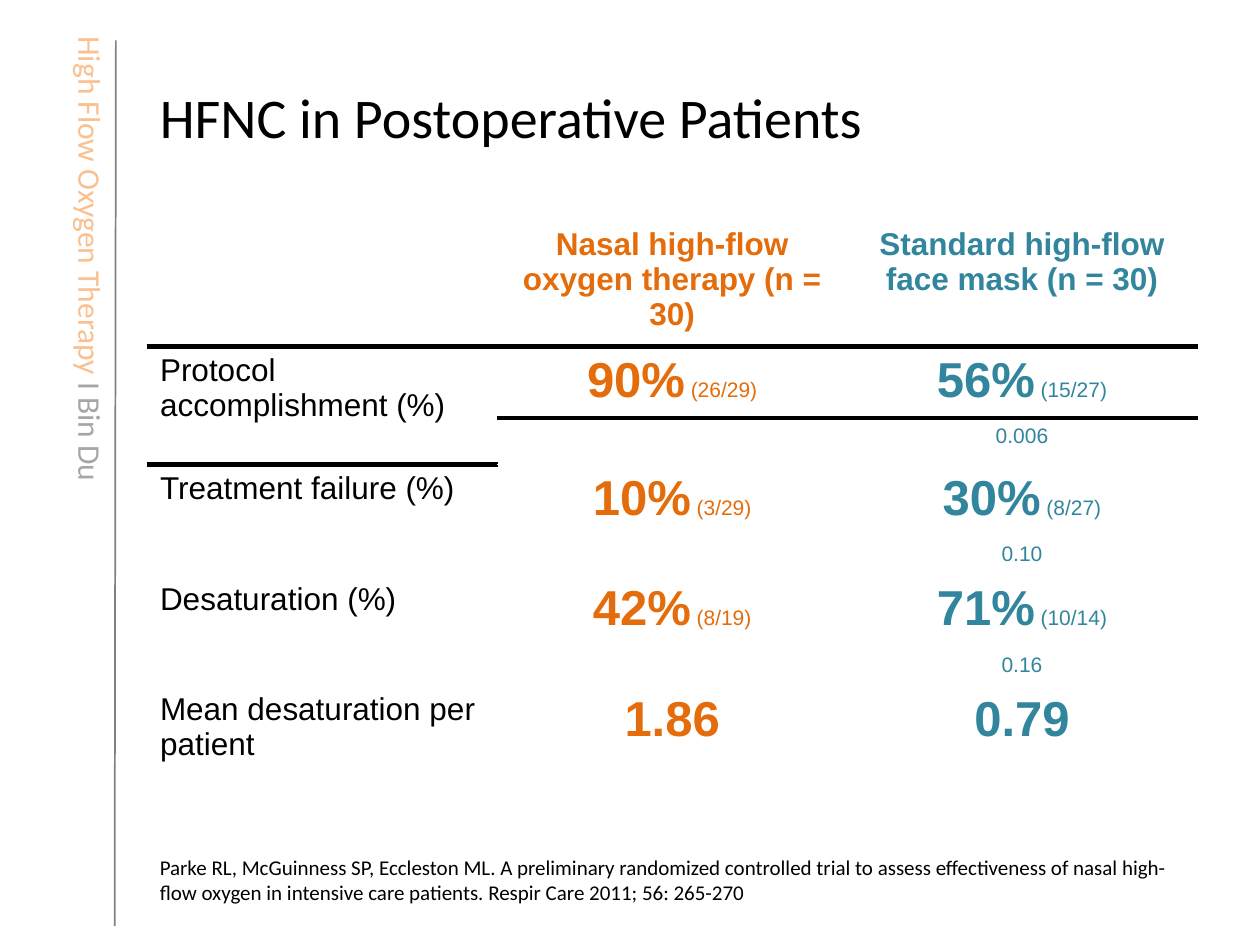
from dataclasses import dataclass
from lxml.etree import SubElement
from pptx import Presentation
from pptx.dml.color import RGBColor
from pptx.enum.text import MSO_ANCHOR, PP_ALIGN
from pptx.oxml import parse_xml
from pptx.oxml.ns import nsdecls, qn
from pptx.util import Inches, Pt


@dataclass(frozen=True)
class Theme:
    black: str = "000000"
    gray: str = "808080"
    pale: str = "A6A6A6"
    peach: str = "FAC090"
    orange: str = "E46C0A"
    teal: str = "31859C"
    head: str = "Calibri"
    body: str = "Arial"
    title: int = 32
    big: int = 28
    text: int = 18
    small: int = 12


class Deck:
    def __init__(self, theme, wide, high):
        self.theme = theme
        self.show = Presentation()
        self.show.slide_width, self.show.slide_height = Inches(wide), Inches(high)
        self.slide = self.show.slides.add_slide(self.show.slide_layouts[6])

    def style(self, font, size=None, color=None, bold=None, face=None):
        if size:
            font.size = Pt(size)
        if color:
            font.color.rgb = RGBColor.from_string(color)
        if bold is not None:
            font.bold = bold
        if face:
            font.name = face

    def text(self, words, box, size, color=None, turn=0, wrap=True, anchor=MSO_ANCHOR.TOP):
        """Words are one string, or (string, color) pairs."""
        shape = self.slide.shapes.add_textbox(*map(Inches, box))
        shape.rotation = turn
        frame = shape.text_frame
        frame.word_wrap = wrap
        frame.vertical_anchor = anchor
        para = frame.paragraphs[0]
        self.style(para.font, size, color, face=self.theme.head)
        for part, tint in [(words, None)] if isinstance(words, str) else words:
            run = para.add_run()
            run.text = part
            self.style(run.font, color=tint)

    def line(self, start, end, color, width):
        rule = self.slide.shapes.add_connector(1, *map(Inches, start + end))
        rule.line.color.rgb = RGBColor.from_string(color)
        rule.line.width = Pt(width)
        SubElement(rule._element.spPr, qn("a:effectLst"))

    def table(self, box, heights, cols):
        shape = self.slide.shapes.add_table(len(heights), cols, *map(Inches, box))
        grid = shape.table
        grid.first_row = grid.horz_banding = False
        for row, high in zip(grid.rows, heights):
            row.height = Inches(high)
        for cell in grid.iter_cells():
            cell.fill.background()
            end = cell.text_frame.paragraphs[0]._p.get_or_add_endParaRPr()
            end.set("sz", str(self.theme.small * 100))
        return grid

    def cell(self, cell, parts, color, align=PP_ALIGN.CENTER):
        """Parts are (string, size, bold) triples."""
        para = cell.text_frame.paragraphs[0]
        para.alignment = align
        self.style(para.font, color=color, face=self.theme.body)
        for words, size, bold in parts:
            run = para.add_run()
            run.text = words
            self.style(run.font, size, bold=bold)

    def edge(self, cell, side, color, width):
        cell._tc.get_or_add_tcPr().insert(0, parse_xml(
            f'<a:ln{side} {nsdecls("a")} w="{Pt(width)}"><a:solidFill>'
            f'<a:srgbClr val="{color}"/></a:solidFill></a:ln{side}>'))


def main():
    look = Theme()
    deck = Deck(look, 10, 7.5)
    left, wide = 1.17, 8.33

    # Side banner
    deck.line((0.92, 0.32), (0.91, 7.35), look.gray, 1)
    deck.text([("High Flow Oxygen Therapy ", look.peach), ("Ι Bin Du", look.pale)],
              (-1.17, 1.88, 3.78, 0.4), look.text, turn=90, wrap=False)

    # Title and source
    deck.text("HFNC in Postoperative Patients", (left, 0.3, wide, 1.25),
              look.title, look.black, anchor=MSO_ANCHOR.MIDDLE)
    deck.text("Parke RL, McGuinness SP, Eccleston ML. A preliminary randomized controlled "
              "trial to assess effectiveness of nasal high-flow oxygen in intensive care "
              "patients. Respir Care 2011; 56: 265-270",
              (left, 6.73, wide, 0.5), look.small, look.black)

    # Table heading
    heights = [1, 0.55, 0.37, 0.56, 0.31, 0.56, 0.31, 0.55, 0.3]
    grid = deck.table((left, 1.75, wide, sum(heights)), heights, 3)
    tints = (look.orange, look.teal)
    heads = ("Nasal high-flow oxygen therapy (n = 30)", "Standard high-flow face mask (n = 30)")
    for col, (words, tint) in enumerate(zip(heads, tints), 1):
        deck.cell(grid.cell(0, col), [(words, look.text, True)], tint)
    for col in range(3):
        deck.edge(grid.cell(0, col), "B", look.black, 3)
        deck.edge(grid.cell(1, col), "T", look.black, 3)

    # Outcomes: two rows each, values above and p value below
    data = [
        ("Protocol accomplishment (%)", ("90%", " (26/29)"), ("56%", " (15/27)"), "0.006"),
        ("Treatment failure (%)", ("10%", " (3/29)"), ("30%", " (8/27)"), "0.10"),
        ("Desaturation (%)", ("42%", " (8/19)"), ("71%", " (10/14)"), "0.16"),
        ("Mean desaturation per patient", ("1.86",), ("0.79",), None),
    ]
    for row, (name, nasal, mask, prob) in zip(range(1, 9, 2), data):
        label = grid.cell(row, 0)
        if row in (1, 7):
            label.merge(grid.cell(row + 1, 0))
        deck.cell(label, [(name, look.text, False)], look.black, PP_ALIGN.LEFT)
        for col, (pair, tint) in enumerate(zip((nasal, mask), tints), 1):
            parts = zip(pair, (look.big, look.small), (True, False))
            deck.cell(grid.cell(row, col), parts, tint)
        if prob:
            deck.cell(grid.cell(row + 1, 2), [(prob, look.small, False)], look.teal)

    deck.show.save("out.pptx")


if __name__ == "__main__":
    main()
